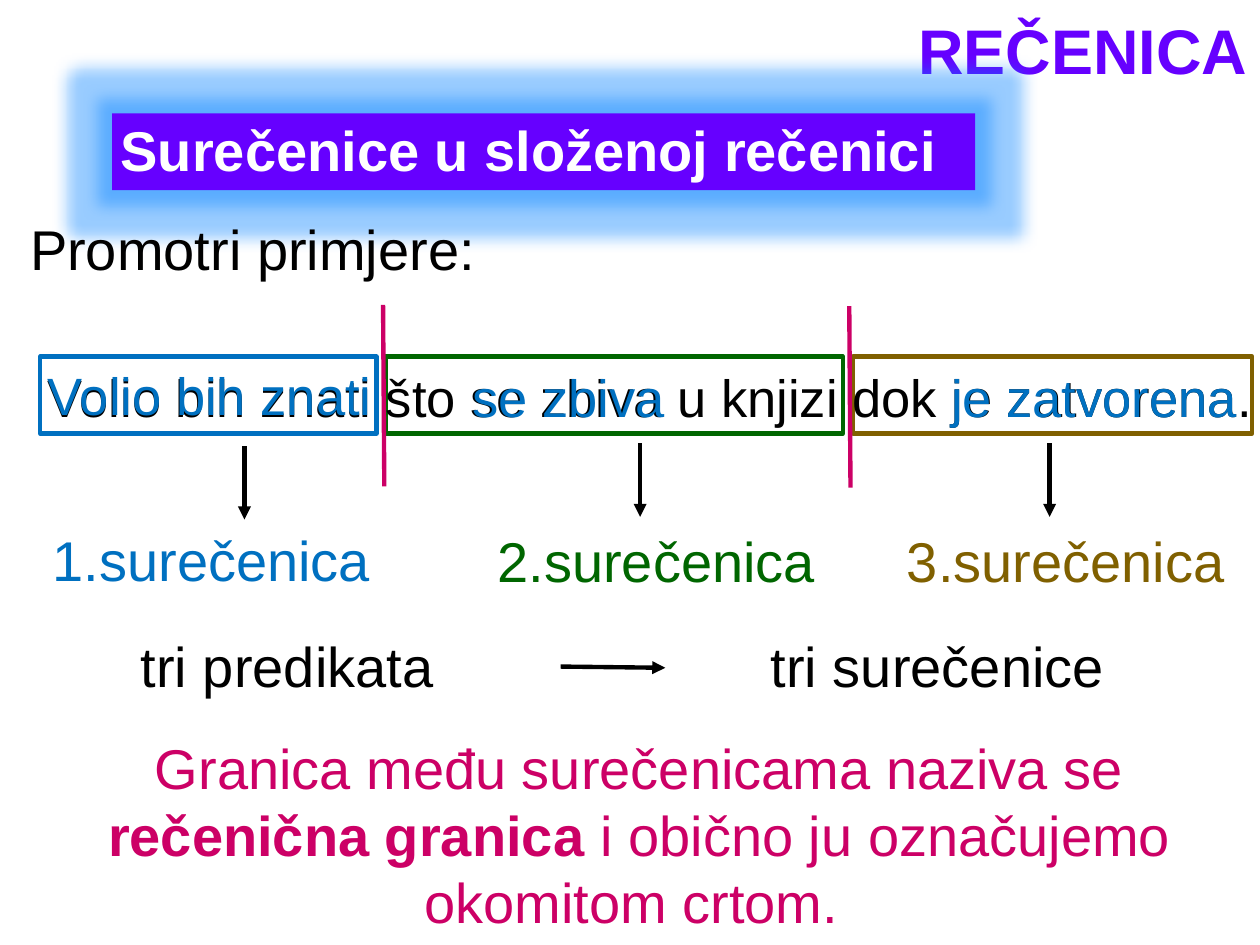
from dataclasses import dataclass
from typing import NamedTuple

from lxml.etree import SubElement
from pptx import Presentation
from pptx.dml.color import RGBColor
from pptx.enum.shapes import MSO_CONNECTOR, MSO_SHAPE
from pptx.enum.text import MSO_ANCHOR, MSO_AUTO_SIZE, PP_ALIGN
from pptx.oxml.ns import qn
from pptx.util import Pt


@dataclass(frozen=True)
class Theme:
    font: str = "Arial"
    black: str = "000000"
    white: str = "FFFFFF"
    violet: str = "6600FF"
    blue: str = "0070C0"
    green: str = "006600"
    brown: str = "806000"
    pink: str = "CC0066"
    glow: str = "0080FF"
    head: int = 36
    body: int = 32
    small: int = 30
    line: float = 2.5


THEME = Theme()


class Box(NamedTuple):
    left: float
    top: float
    width: float
    height: float


@dataclass(frozen=True)
class Label:
    text: str
    box: Box
    color: str = THEME.black
    size: int = THEME.body
    wrap: bool = True


@dataclass(frozen=True)
class Clause:
    frame: Box
    name: str
    label: tuple
    arrow: tuple
    color: str


@dataclass(frozen=True)
class Line:
    start: tuple
    end: tuple
    color: str = THEME.black
    arrow: bool = False


def style(para, size: int, color: str, bold: bool = False) -> None:
    font = para.font
    font.name, font.size, font.bold = THEME.font, Pt(size), bold
    font.color.rgb = RGBColor.from_string(color)


def place(shape, box: Box) -> None:
    shape.left, shape.top, shape.width, shape.height = map(Pt, box)


def add_rect(slide, box: Box, fill: str, edge: str = ""):
    rect = slide.shapes.add_shape(MSO_SHAPE.RECTANGLE, *map(Pt, box))
    rect.shadow.inherit = False
    rect.fill.solid()
    rect.fill.fore_color.rgb = RGBColor.from_string(fill)
    if edge:
        rect.line.color.rgb = RGBColor.from_string(edge)
        rect.line.width = Pt(THEME.line)
    else:
        rect.line.fill.background()
    return rect


def add_glow(shape, size: float, color: str) -> None:
    effects = shape._element.spPr.find(qn("a:effectLst"))
    glow = SubElement(effects, qn("a:glow"), rad=str(Pt(size)))
    tint = SubElement(glow, qn("a:srgbClr"), val=color)
    SubElement(tint, qn("a:alpha"), val="40000")


def add_label(slide, label: Label):
    shape = slide.shapes.add_textbox(*map(Pt, label.box))
    frame = shape.text_frame
    frame.word_wrap = label.wrap
    frame.auto_size = MSO_AUTO_SIZE.SHAPE_TO_FIT_TEXT
    para = frame.paragraphs[0]
    para.text = label.text
    style(para, label.size, label.color)
    return shape


def add_line(slide, line: Line) -> None:
    shape = slide.shapes.add_connector(
        MSO_CONNECTOR.STRAIGHT, *map(Pt, line.start + line.end))
    shape.line.color.rgb = RGBColor.from_string(line.color)
    shape.line.width = Pt(THEME.line)
    if line.arrow:
        SubElement(shape.line._get_or_add_ln(), qn("a:tailEnd"), type="triangle")
    SubElement(shape._element.spPr, qn("a:effectLst"))


def add_title(slide) -> None:
    title = slide.shapes.title
    place(title, Box(160.5, -0.7, 559.5, 54.7))
    frame = title.text_frame
    frame.auto_size = MSO_AUTO_SIZE.NONE
    frame.vertical_anchor = MSO_ANCHOR.BOTTOM
    para = frame.paragraphs[0]
    para.text = "REČENICA"
    para.alignment = PP_ALIGN.RIGHT
    para.line_spacing = 0.9
    style(para, THEME.head, THEME.violet, True)


def add_banner(slide) -> None:
    rect = add_rect(slide, Box(64, 64.8, 493.2, 43.9), THEME.violet)
    add_glow(rect, 18, THEME.glow)
    text = add_label(slide, Label(
        "Surečenice u složenoj rečenici", Box(64, 46.8, 512, 60.5), THEME.white))
    frame = text.text_frame
    frame.auto_size = MSO_AUTO_SIZE.NONE
    frame.vertical_anchor = MSO_ANCHOR.BOTTOM
    frame.margin_left = frame.margin_right = Pt(5)
    frame.margin_top = frame.margin_bottom = Pt(2.9)
    para = frame.paragraphs[0]
    para.space_before = Pt(10)
    para.font.bold = True


def add_count(slide) -> None:
    text = add_label(slide, Label(
        "tri predikata\ttri surečenice", Box(73.4, 357.1, 630, 46)))
    props = text.text_frame.paragraphs[0]._p.get_or_add_pPr()
    stops = SubElement(props, qn("a:tabLst"))
    SubElement(stops, qn("a:tab"), pos=str(Pt(360)), algn="l")
    props.insert(0, stops)


def add_rule(slide) -> None:
    text = add_label(slide, Label("", Box(22.3, 415.4, 686.2, 123.8), THEME.pink))
    para = text.text_frame.paragraphs[0]
    para.alignment = PP_ALIGN.CENTER
    parts = (("Granica među surečenicama naziva se ", False),
             ("rečenična granica ", True),
             ("i obično ju označujemo okomitom crtom. ", False))
    for words, bold in parts:
        run = para.add_run()
        run.text = words
        style(run, THEME.body, THEME.pink, bold)


CLAUSES = (
    Clause(Box(487.4, 203.8, 228.2, 43.9), "3.surečenica",
           (511.2, 297.4), (599.8, 253.4), THEME.brown),
    Clause(Box(220.3, 203.8, 261.4, 43.9), "2.surečenica",
           (277.2, 297.4), (365.8, 253.4), THEME.green),
    Clause(Box(23, 203.8, 192.2, 43.9), "1.surečenica",
           (23, 296.6), (139.7, 254.9), THEME.blue),
)
LABELS = (
    Label("Promotri primjere:", Box(10.1, 118.8, 688.3, 46)),
    Label("Volio bih znati što se zbiva u knjizi dok je zatvorena.",
          Box(20.2, 205.2, 774.7, 43.9), size=THEME.small),
    Label("Volio bih znati", Box(20.2, 203.8, 200.9, 43.9),
          THEME.blue, THEME.small, False),
    Label("se zbiva", Box(262.8, 205.2, 125.3, 43.9),
          THEME.blue, THEME.small, False),
    Label("je zatvorena", Box(536.4, 205.2, 179.3, 43.9),
          THEME.blue, THEME.small, False),
)
LINES = (
    Line((320.4, 380.9), (380.2, 381.6), arrow=True),
    Line((485.3, 175), (486, 278.6), THEME.pink),
    Line((218.9, 174.2), (219.6, 277.9), THEME.pink),
)


def main() -> None:
    deck = Presentation()
    deck.slide_width, deck.slide_height = Pt(720), Pt(540)
    slide = deck.slides.add_slide(deck.slide_layouts[5])
    add_title(slide)
    for clause in CLAUSES:
        add_rect(slide, clause.frame, THEME.white, clause.color)
    add_banner(slide)
    for label in LABELS:
        add_label(slide, label)
    for clause in CLAUSES:
        add_label(slide, Label(clause.name, Box(*clause.label, 197.3, 46),
                               clause.color, wrap=False))
        left, top = clause.arrow
        add_line(slide, Line((left, top), (left, top + 42), arrow=True))
    add_count(slide)
    add_rule(slide)
    for line in LINES:
        add_line(slide, line)
    deck.save("out.pptx")


if __name__ == "__main__":
    main()
